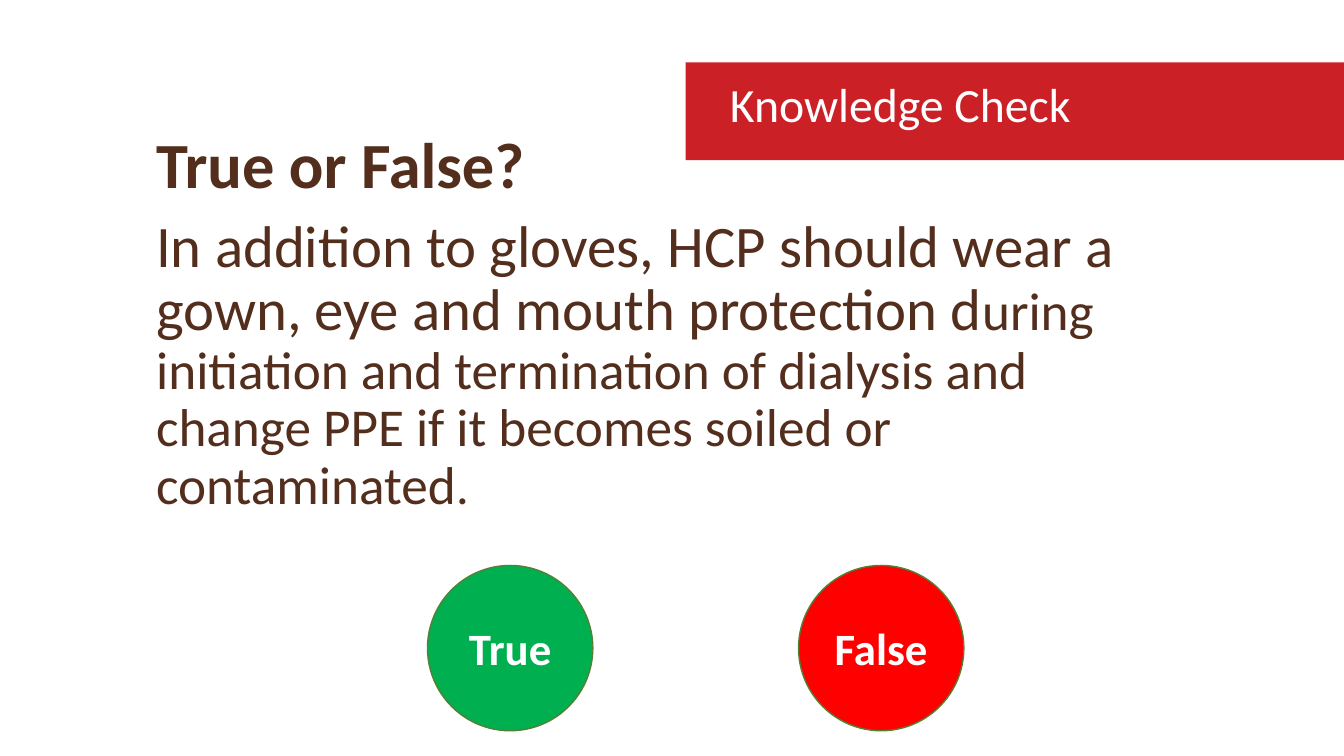
"""Build a true-or-false knowledge check slide with two answer buttons."""
import dataclasses

import pptx
import pptx.dml.color
import pptx.enum.shapes
import pptx.enum.text
import pptx.util


@dataclasses.dataclass(frozen=True)
class Theme:
    font: str = "Calibri"
    brown: str = "532E1D"
    white: str = "FFFFFF"
    banner: str = "CC2027"
    true: str = "00B050"
    false: str = "FF0000"
    outline: str = "538035"
    heading_size: float = 46
    lead_size: float = 42
    detail_size: float = 38
    stop_size: float = 36
    title_size: float = 34.1
    answer_size: float = 32


theme = Theme()
inch = pptx.util.Inches
rgb = pptx.dml.color.RGBColor.from_string
preset = pptx.enum.shapes.MSO_SHAPE
align = pptx.enum.text.PP_ALIGN
anchor = pptx.enum.text.MSO_ANCHOR


def add_run(paragraph, wording, size, color, bold=False):
    run = paragraph.add_run()
    run.text = wording
    run.font.name = theme.font
    run.font.size = pptx.util.Pt(size)
    run.font.bold = bold
    run.font.color.rgb = rgb(color)


def add_panel(outline, left, top, width, height, color):
    panel = slide.shapes.add_shape(outline, left, top, width, height)
    panel.shadow.inherit = False
    panel.fill.solid()
    panel.fill.fore_color.rgb = rgb(color)
    panel.line.fill.background()
    return panel


deck = pptx.Presentation()
deck.slide_width, deck.slide_height = inch(13.33), inch(7.5)
slide = deck.slides.add_slide(deck.slide_layouts[5])

question = slide.shapes.add_textbox(inch(1.45), inch(1.27), inch(10.17), inch(4.67)).text_frame
question.word_wrap = True
statement = [
    [("True or False?", theme.heading_size, True)],
    [
        ("In addition to gloves, HCP should wear a gown, eye and mouth protection d", theme.lead_size, False),
        ("uring initiation and termination of dialysis and change PPE if it becomes soiled or contaminated",
         theme.detail_size, False),
        (".", theme.stop_size, False),
    ],
]
for index, parts in enumerate(statement):
    paragraph = question.add_paragraph() if index else question.paragraphs[0]
    paragraph.line_spacing = 0.9
    paragraph.space_before = pptx.util.Pt(10)
    for wording, size, bold in parts:
        add_run(paragraph, wording, size, theme.brown, bold)

banner_left = inch(6.8)
add_panel(preset.RECTANGLE, banner_left, inch(0.62), deck.slide_width - banner_left, inch(0.97), theme.banner)

title = slide.shapes.title
slide.shapes._spTree.append(title._element)
title.left, title.top, title.width, title.height = inch(7.14), inch(0.69), inch(3.65), inch(0.82)
title.text_frame.auto_size = pptx.enum.text.MSO_AUTO_SIZE.NONE
title.text_frame.vertical_anchor = anchor.MIDDLE
topic = title.text_frame.paragraphs[0]
topic.alignment = align.LEFT
topic.line_spacing = 0.7
add_run(topic, "Knowledge Check", theme.title_size, theme.white)

diameter, answer_pitch = inch(1.64), inch(3.68)
for column, (answer, color) in enumerate([("True", theme.true), ("False", theme.false)]):
    button = add_panel(preset.OVAL, inch(4.24) + column * answer_pitch, inch(5.61), diameter, diameter, color)
    button.line.color.rgb = rgb(theme.outline)
    button.line.width = pptx.util.Pt(1)
    button.text_frame.vertical_anchor = anchor.MIDDLE
    label = button.text_frame.paragraphs[0]
    label.alignment = align.CENTER
    add_run(label, answer, theme.answer_size, theme.white, True)

deck.save("out.pptx")
